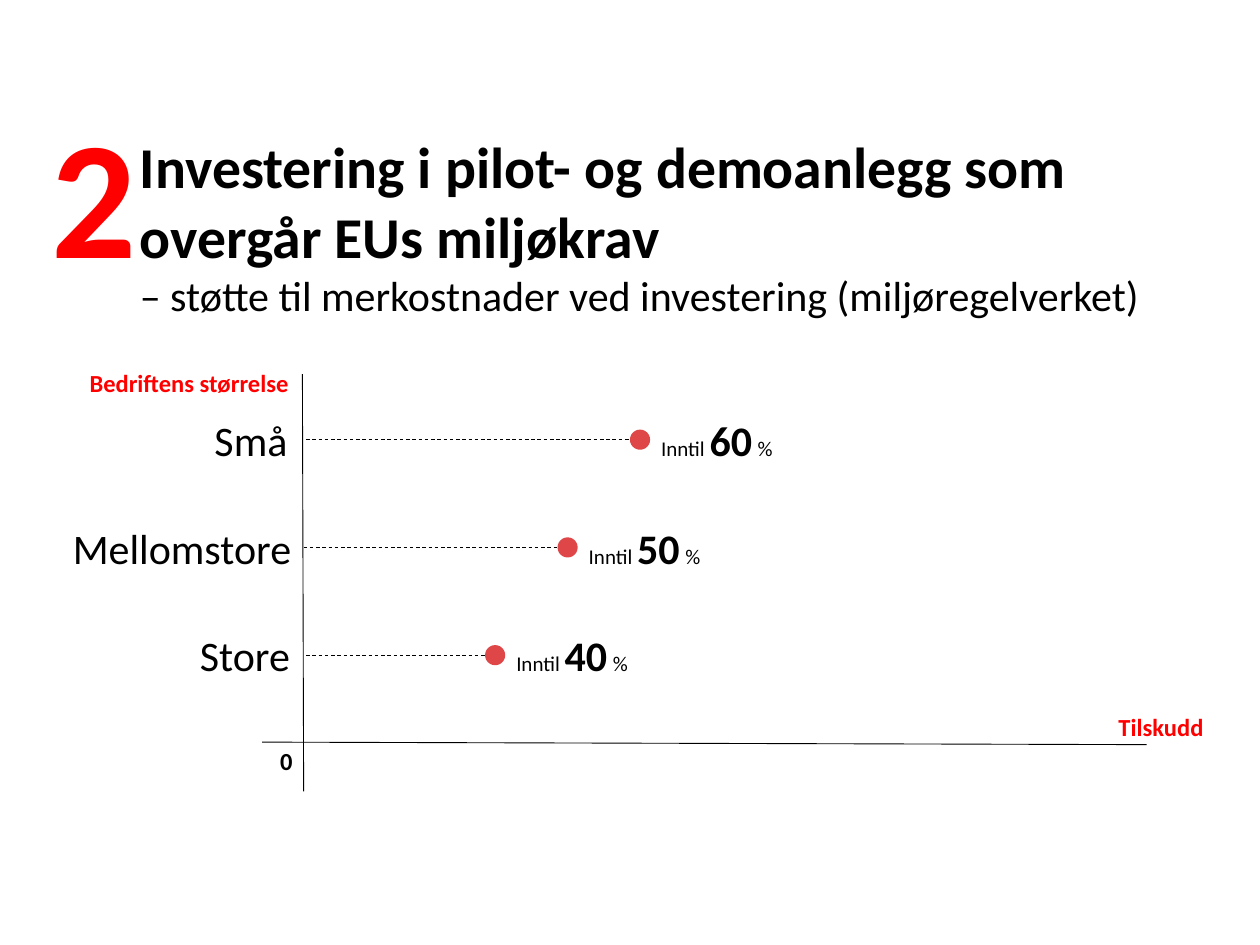
from dataclasses import dataclass

from lxml import etree
from pptx import Presentation
from pptx import util as u
from pptx.dml.color import RGBColor
from pptx.enum import dml, shapes, text
from pptx.oxml import ns


@dataclass(frozen=True)
class Theme:
    font: str = "Calibri"
    ink: str = "000000"
    red: str = "FF0000"
    dot: str = "DE4648"
    huge: int = 96
    head: int = 33
    body: int = 24
    note: int = 14
    tiny: int = 12
    rule: float = 0.5


class Board:
    def __init__(self, theme, cols=100, rows=75):
        self.theme = theme
        self.deck = Presentation()
        self.deck.slide_width = u.Inches(10)
        self.deck.slide_height = u.Inches(7.5)
        self.col = self.deck.slide_width / cols
        self.row = self.deck.slide_height / rows
        self.slide = self.deck.slides.add_slide(self.deck.slide_layouts[6])

    def place(self, x, y):
        return round(x * self.col), round(y * self.row)

    def words(self, x, y, wide, high, lines, align="LEFT", color=None,
              space=None, inset=True, wrap=True):
        box = self.slide.shapes.add_textbox(*self.place(x, y), *self.place(wide, high))
        frame = box.text_frame
        frame.word_wrap = wrap
        if not inset:
            frame.margin_left = frame.margin_right = 0
            frame.margin_top = frame.margin_bottom = 0
        frame.text = "\n".join("".join(part[0] for part in line) for line in lines)
        for para, line in zip(frame.paragraphs, lines):
            para.alignment = text.PP_ALIGN[align]
            para.line_spacing = space
            para.text = ""
            for word, size, bold in line:
                run = para.add_run()
                run.text = word
                run.font.name = self.theme.font
                run.font.size = u.Pt(size)
                run.font.bold = bold
                run.font.color.rgb = RGBColor.from_string(color or self.theme.ink)

    def rule(self, start, end, dash=False):
        line = self.slide.shapes.add_connector(
            shapes.MSO_CONNECTOR.STRAIGHT, *self.place(*start), *self.place(*end))
        line.line.color.rgb = RGBColor.from_string(self.theme.ink)
        line.line.width = u.Pt(self.theme.rule)
        if dash:
            line.line.dash_style = dml.MSO_LINE.DASH
        etree.SubElement(line._element.spPr, ns.qn("a:effectLst"))

    def dot(self, x, y, size):
        mark = self.slide.shapes.add_shape(
            shapes.MSO_SHAPE.OVAL, *self.place(x, y), *self.place(size, size))
        mark.shadow.inherit = False
        mark.fill.solid()
        mark.fill.fore_color.rgb = RGBColor.from_string(self.theme.dot)
        mark.line.fill.background()


def main():
    theme = Theme()
    board = Board(theme)

    board.words(11.1, 10.4, 86, 15, [
        [("Investering i pilot- og demoanlegg som overgår EUs miljøkrav", theme.head, True)],
        [("– støtte til merkostnader ved investering (miljøregelverket)", theme.body, False)],
    ], inset=False)
    board.words(3.1, 6.7, 8.8, 17.2, [[("2", theme.huge, True)]],
                color=theme.red, wrap=False)

    board.rule((24.1, 62.8), (24, 29.7))
    board.rule((20.8, 58.9), (91, 59.1))
    board.words(5.4, 29.2, 18.5, 2.9, [[("Bedriftens størrelse", theme.note, True)]],
                "RIGHT", theme.red, space=0.8)
    board.words(83, 56, 13.5, 3.4, [[("Tilskudd", theme.note, True)]], "RIGHT", theme.red)
    board.words(16.1, 58.7, 8.1, 3.4, [[("0", theme.note, True)]], "RIGHT")

    first, pitch, size, high = 34.9, 8.55, 1.6, 5
    wide, span = 19.7, 11.5
    sizes = [("Små", 60, 23.8, 24.3), ("Mellomstore", 50, 24.1, 24.1),
             ("Store", 40, 24, 24.3)]
    for step, (name, share, edge, start) in enumerate(sizes):
        mid = first + step * pitch
        left = 50 - (60 - share) * 0.575
        top = mid - high / 2
        board.words(edge - wide, top, wide, high, [[(name, theme.body, False)]], "RIGHT")
        board.rule((start, mid), (left, mid), dash=True)
        board.dot(left, mid - size / 2, size)
        board.words(left + 6.9 - span / 2, top, span, high, [[
            ("Inntil ", theme.tiny, False), (str(share), theme.body, True),
            (" ", theme.note, True), ("%", theme.tiny, False)]], "CENTER")

    board.deck.save("out.pptx")


if __name__ == "__main__":
    main()
